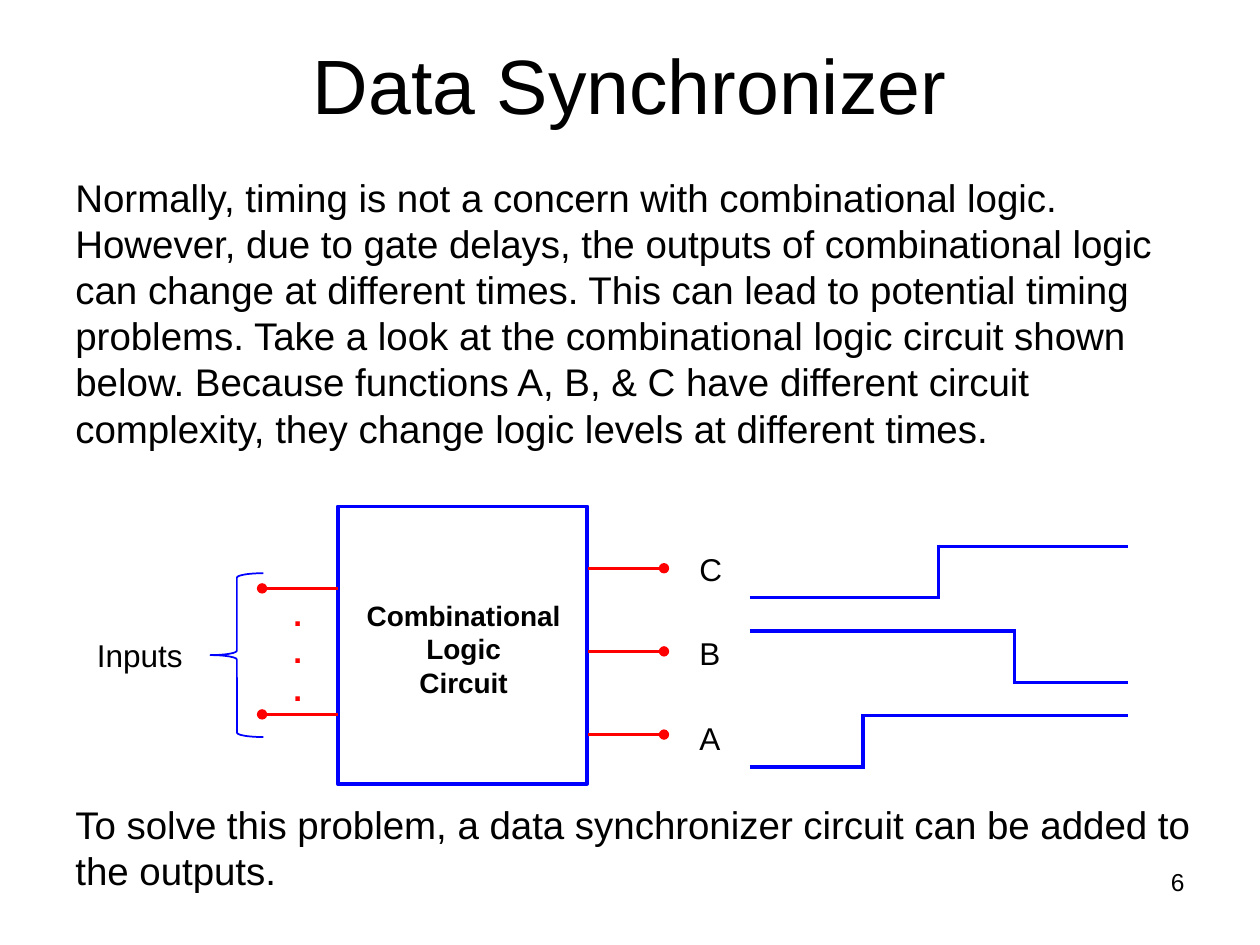
from collections import defaultdict
from dataclasses import dataclass

from lxml.etree import SubElement
from pptx import Presentation
from pptx.dml.color import RGBColor
from pptx.enum.shapes import MSO_CONNECTOR, MSO_SHAPE
from pptx.enum.text import MSO_ANCHOR, PP_ALIGN
from pptx.oxml.ns import qn
from pptx.util import Inches, Pt


@dataclass(frozen=True)
class Theme:
    """Colours, type sizes and line widths of the slide."""
    face: str = "Arial"
    ink: RGBColor = RGBColor(0, 0, 0)
    blue: RGBColor = RGBColor(0, 0, 255)
    red: RGBColor = RGBColor(255, 0, 0)
    paper: RGBColor = RGBColor(255, 255, 255)
    title: int = 44
    body: int = 22
    label: int = 18
    block: int = 16
    page: int = 14
    tiny: int = 6
    thick: float = 2.25
    wire: float = 1.5
    thin: float = 1


THEME = Theme()
COLS, ROWS = 100, 75
CELL = Inches(0.1)
PLAIN = "{2D5ABB26-0587-4C30-8999-92F81FD0307C}"


def span(*cells):
    """Turn grid cells into lengths."""
    return [round(cell * CELL) for cell in cells]


def inside(box, x, y, w, h):
    """Shift a part into its region's box."""
    return box[0] + x, box[1] + y, w, h


def dress(item, looks):
    """Set each attribute named in a dict of format values."""
    for name, value in looks.items():
        setattr(item, name, value)


def write(frame, lines, size, color=THEME.ink, bold=False, align=PP_ALIGN.LEFT, gap=0):
    """Write one paragraph per line, with a gap before all but the first."""
    for row, line in enumerate(lines):
        para = frame.add_paragraph() if row else frame.paragraphs[0]
        para.alignment = align
        if row and gap:
            para.space_before = Pt(gap)
        run = para.add_run()
        run.text = line
        dress(run.font, {"name": THEME.face, "size": Pt(size), "bold": bold})
        run.font.color.rgb = color


def text(slide, box, lines, size, wrap=True, anchor=MSO_ANCHOR.TOP, **looks):
    """Place a text box."""
    frame = slide.shapes.add_textbox(*span(*box)).text_frame
    dress(frame, {"word_wrap": wrap, "vertical_anchor": anchor})
    write(frame, lines, size, **looks)


def outline(slide, kind, box, width):
    """Place an unfilled blue shape."""
    shape = slide.shapes.add_shape(kind, *span(*box))
    shape.shadow.inherit = False
    shape.fill.background()
    shape.line.color.rgb = THEME.blue
    shape.line.width = Pt(width)


def wire(slide, box, start, end, y):
    """Draw a level red wire that ends in a dot."""
    left, top = box[:2]
    line = slide.shapes.add_connector(
        MSO_CONNECTOR.STRAIGHT, *span(left + start, top + y, left + end, top + y))
    line.line.color.rgb = THEME.red
    line.line.width = Pt(THEME.wire)
    SubElement(line.get_or_add_ln(), qn("a:tailEnd"), type="oval")
    SubElement(line._element.spPr, qn("a:effectLst"))


def circuit(slide, box):
    """Draw the logic block with its inputs and outputs."""
    outline(slide, MSO_SHAPE.RECTANGLE, inside(box, 20.1, 0, 19.8, 22), THEME.thick)
    text(slide, inside(box, 21.3, 6.8, 17.6, 9.4), ["Combinational", "Logic", "Circuit"],
         THEME.block, wrap=False, bold=True, align=PP_ALIGN.CENTER)
    for port in range(3):
        wire(slide, box, 40, 46, 4.9 + 6.6 * port)
    for y in (6.5, 16.5):
        wire(slide, box, 20.1, 14.1, y)
    text(slide, inside(box, 15.6, 6.5, 2.7, 10.1), ["."] * 3, THEME.label,
         wrap=False, color=THEME.red, bold=True)
    outline(slide, MSO_SHAPE.LEFT_BRACE, inside(box, 10, 5.3, 4.2, 13), THEME.thin)
    text(slide, inside(box, 0, 9.8, 8.9, 4), ["Inputs"], THEME.label, wrap=False)


def trace(edges, row, step, rise):
    """Mark the cell edges along one wave."""
    for col in range(1, 11):
        high = (col > step) == rise
        edges[row, col].add("T" if high else "B")
        edges[(row - 1, col) if high else (row + 1, col)].add("B" if high else "T")
    edges[row, step].add("R")
    edges[row, step + 1].add("L")


def border(cell, sides):
    """Draw the marked sides of a cell and clear the others."""
    for side in "LRTB":
        drawn = side in sides
        line = SubElement(cell._tc.get_or_add_tcPr(), qn("a:ln" + side),
                          w=str(Pt(THEME.thick) if drawn else 0))
        fill = SubElement(line, qn("a:solidFill" if drawn else "a:noFill"))
        if drawn:
            SubElement(fill, qn("a:srgbClr"), val=str(THEME.blue))


def waves(slide, box, signals):
    """Draw the timing table, one wave for each signal."""
    count = 2 * len(signals) + 1
    table = slide.shapes.add_table(count, 12, *span(*box)).table
    dress(table, {"first_row": False, "horz_banding": False})
    table._tbl.find(".//" + qn("a:tableStyleId")).text = PLAIN
    for col, part in enumerate(table.columns):
        part.width = span(3 if col else 5)[0]
    for row, part in enumerate(table.rows):
        part.height = span(4.08 if row % 2 else 2.65)[0]
    edges = defaultdict(set)
    for index, (name, step, rise) in enumerate(signals):
        row = 2 * index + 1
        trace(edges, row, step, rise)
        write(table.cell(row, 0).text_frame, [name], THEME.label)
    for row in range(count):
        for col in range(12):
            cell = table.cell(row, col)
            if not cell.text:
                para = cell.text_frame.paragraphs[0]._p
                para.get_or_add_endParaRPr().set("sz", str(THEME.tiny * 100))
            border(cell, edges[row, col])
            cell.fill.solid()
            cell.fill.fore_color.rgb = THEME.paper


def main():
    """Build and save the slide."""
    deck = Presentation()
    dress(deck, {"slide_width": COLS * CELL, "slide_height": ROWS * CELL})
    slide = deck.slides.add_slide(deck.slide_layouts[6])
    text(slide, (0, 0, COLS, 13.3), ["Data Synchronizer"], THEME.title,
         anchor=MSO_ANCHOR.MIDDLE, align=PP_ALIGN.CENTER)
    text(slide, (5, 13.3, 92.5, 58.3), [
        "Normally, timing is not a concern with combinational logic. However, due to gate "
        "delays, the outputs of combinational logic can change at different times. This can "
        "lead to potential timing problems. Take a look at the combinational logic circuit "
        "shown below. Because functions A, B, & C have different circuit complexity, they "
        "change logic levels at different times.",
        "To solve this problem, a data synchronizer circuit can be added to the outputs.",
    ], THEME.body, gap=200)
    text(slide, (71.7, 68.3, 23.3, 5.2), ["6"], THEME.page, align=PP_ALIGN.RIGHT)
    waves(slide, (54.5, 40.7, 38, 22.8), [("C", 5, True), ("B", 7, False), ("A", 3, True)])
    circuit(slide, (6.7, 40.2, 46, 22))
    deck.save("out.pptx")


if __name__ == "__main__":
    main()
